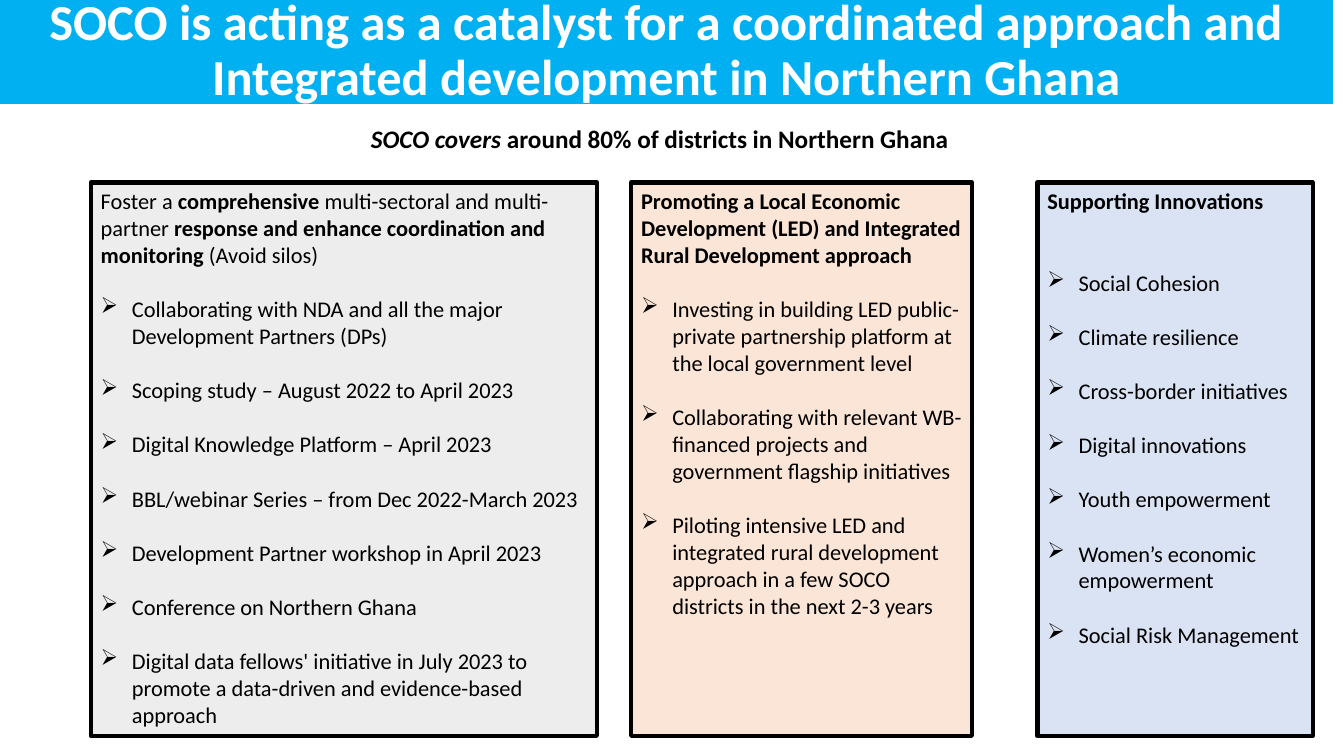
from pptx import Presentation
from pptx.dml.color import RGBColor
from pptx.enum import shapes, text
from pptx.oxml import parse_xml
from pptx.oxml.ns import nsdecls
from pptx.util import Inches, Pt

BLACK = RGBColor(0x00, 0x00, 0x00)
WHITE = RGBColor(0xFF, 0xFF, 0xFF)
SKY = RGBColor(0x00, 0xB0, 0xF0)
GREY = RGBColor(0xED, 0xED, 0xED)
PEACH = RGBColor(0xFB, 0xE5, 0xD6)
BLUE = RGBColor(0xDA, 0xE3, 0xF3)
LINE = 19.5

PANELS = [
    (0.9, 5.02, GREY, 1,
     [("Foster a ", ""), ("comprehensive ", "b"),
      ("multi-sectoral and multi-partner ", ""),
      ("response and enhance coordination and monitoring ", "b"),
      ("(Avoid silos)", "")],
     ["Collaborating with NDA and all the major Development Partners (DPs)",
      "Scoping study – August 2022 to April 2023",
      "Digital Knowledge Platform – April 2023",
      "BBL/webinar Series – from Dec 2022-March 2023",
      "Development Partner workshop in April 2023",
      "Conference on Northern Ghana",
      "Digital data fellows' initiative in July 2023 to promote "
      "a data-driven and evidence-based approach"]),
    (6.26, 3.38, PEACH, 1,
     [("Promoting a Local Economic Development (LED) and Integrated "
       "Rural Development approach", "b")],
     ["Investing in building LED public-private partnership platform "
      "at the local government level",
      "Collaborating with relevant WB-financed projects and "
      "government flagship initiatives",
      "Piloting intensive LED and integrated rural development approach "
      "in a few SOCO districts in the next 2-3 years"]),
    (10.29, 2.73, BLUE, 2,
     [("Supporting Innovations", "b")],
     ["Social Cohesion", "Climate resilience", "Cross-border initiatives",
      "Digital innovations", "Youth empowerment",
      "Women’s economic empowerment", "Social Risk Management"]),
]


def write(para, runs, size=16, color=BLACK, align=text.PP_ALIGN.LEFT,
          before=0, spacing=1.0, bullet=None):
    """Fill a paragraph with (words, style) runs, where style holds b and i."""
    para.alignment = align
    para.space_before = Pt(before)
    para.line_spacing = spacing
    if bullet:
        props = para._p.get_or_add_pPr()
        props.set("marL", str(Inches(0.31)))
        props.set("indent", str(-Inches(0.31)))
        props.append(parse_xml(f'<a:buChar {nsdecls("a")} char="{bullet}"/>'))
    for words, style in runs:
        run = para.add_run()
        run.text = words
        font = run.font
        font.name, font.size = "Calibri", Pt(size)
        font.bold, font.italic = "b" in style, "i" in style
        font.color.rgb = color


def banner(slide, left, top, width, height):
    """Place the slide title on its coloured band."""
    title = slide.shapes.title
    title.left, title.top = Inches(left), Inches(top)
    title.width, title.height = Inches(width), Inches(height)
    title.fill.solid()
    title.fill.fore_color.rgb = SKY
    frame = title.text_frame
    frame.auto_size = text.MSO_AUTO_SIZE.NONE
    frame.vertical_anchor = text.MSO_ANCHOR.MIDDLE
    write(frame.paragraphs[0],
          [("SOCO is acting as a catalyst for a coordinated approach and "
            "Integrated development in Northern Ghana", "b")],
          size=36, color=WHITE, align=text.PP_ALIGN.CENTER, spacing=0.9)


def lead(slide, left, top, width, height):
    """Place the line that states the coverage."""
    box = slide.shapes.add_textbox(Inches(left), Inches(top),
                                   Inches(width), Inches(height))
    box.text_frame.word_wrap = True
    write(box.text_frame.paragraphs[0],
          [("SOCO covers ", "bi"),
           ("around 80% of districts in Northern Ghana", "b")], size=18)


def panel(slide, left, top, width, height, fill, gap, head, items):
    """Place a framed panel with a heading and bulleted items."""
    box = slide.shapes.add_shape(shapes.MSO_SHAPE.RECTANGLE, Inches(left),
                                 Inches(top), Inches(width), Inches(height))
    box.shadow.inherit = False
    box.fill.solid()
    box.fill.fore_color.rgb = fill
    box.line.color.rgb = BLACK
    box.line.width = Pt(3)
    frame = box.text_frame
    frame.word_wrap = True
    frame.vertical_anchor = text.MSO_ANCHOR.TOP
    write(frame.paragraphs[0], head)
    for num, item in enumerate(items):
        write(frame.add_paragraph(), [(item, "")], bullet="➢",
              before=LINE * (1 if num else gap))


def main():
    """Build and save the slide."""
    deck = Presentation()
    deck.slide_width, deck.slide_height = Inches(13.33), Inches(7.5)
    slide = deck.slides.add_slide(deck.slide_layouts[5])
    banner(slide, 0, 0, 13.22, 1.03)
    lead(slide, 3.58, 1.17, 6.05, 0.4)
    for left, width, *rest in PANELS:
        panel(slide, left, 1.81, width, 5.49, *rest)
    deck.save("out.pptx")


if __name__ == "__main__":
    main()
